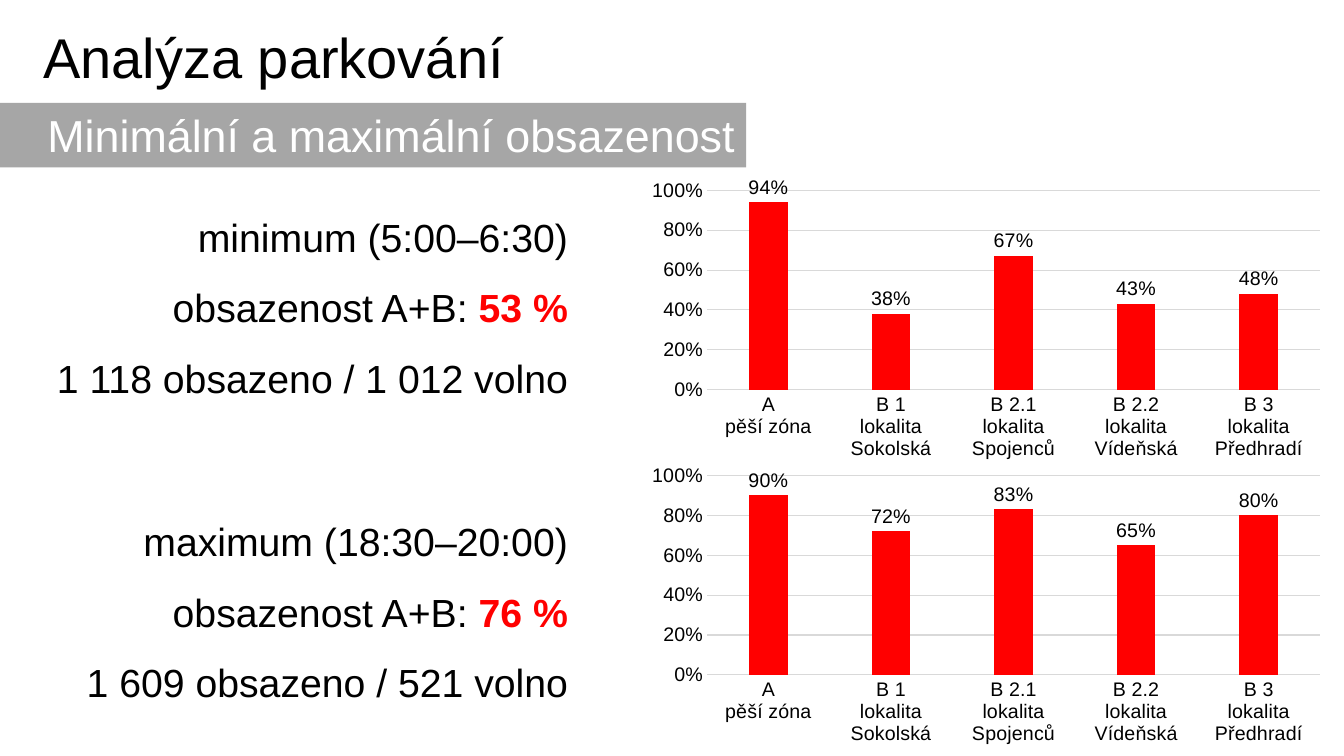
from dataclasses import dataclass

from pptx import Presentation
from pptx.chart.data import CategoryChartData
from pptx.dml.color import RGBColor
from pptx.enum.chart import XL_CHART_TYPE, XL_LABEL_POSITION, XL_TICK_MARK
from pptx.enum.shapes import MSO_SHAPE
from pptx.enum.text import MSO_ANCHOR, PP_ALIGN
from pptx.util import Inches, Pt

COLORS = {"text": "000000", "accent": "FF0000", "band": "A6A6A6",
          "grid": "D9D9D9", "white": "FFFFFF"}
FONT = "Arial"
ZONES = ["A\npěší zóna", "B 1\nlokalita Sokolská", "B 2.1\nlokalita Spojenců",
         "B 2.2\nlokalita Vídeňská", "B 3\nlokalita Předhradí"]


@dataclass
class Box:
    left: float
    top: float
    width: float
    height: float

    def emu(self) -> list:
        return [Inches(n) for n in (self.left, self.top, self.width, self.height)]


@dataclass
class Survey:
    note: Box
    chart: Box
    time: str
    share: str
    count: str
    values: tuple


SURVEYS = [
    Survey(Box(0.11, 1.83, 5.62, 2.22), Box(6.33, 1.72, 6.9, 2.9),
           "minimum (5:00–6:30)", "53 %", "1 118 obsazeno / 1 012 volno",
           (0.94, 0.38, 0.67, 0.43, 0.48)),
    Survey(Box(0.11, 4.85, 5.62, 2.22), Box(6.33, 4.55, 6.9, 2.9),
           "maximum (18:30–20:00)", "76 %", "1 609 obsazeno / 521 volno",
           (0.9, 0.72, 0.83, 0.65, 0.8)),
]


def color(name: str) -> RGBColor:
    return RGBColor.from_string(COLORS[name])


def style(font, size: int, name: str = "text", face: str = FONT) -> None:
    font.size = Pt(size)
    font.name = face
    font.color.rgb = color(name)


def add_rect(slide, box: Box, fill: str):
    rect = slide.shapes.add_shape(MSO_SHAPE.RECTANGLE, *box.emu())
    rect.shadow.inherit = False
    rect.fill.solid()
    rect.fill.fore_color.rgb = color(fill)
    rect.line.fill.background()
    rect.text_frame.word_wrap = True
    rect.text_frame.vertical_anchor = MSO_ANCHOR.TOP
    return rect


def add_title(slide) -> None:
    frame = slide.shapes.add_textbox(*Box(0.33, 0.17, 5.62, 0.77).emu()).text_frame
    frame.word_wrap = True
    frame.text = "Analýza parkování"
    style(frame.paragraphs[0].runs[0].font, 40)


def add_band(slide) -> None:
    frame = add_rect(slide, Box(0, 1.02, 7.4, 0.64), "band").text_frame
    frame.margin_left = Inches(0.47)
    frame.margin_right = 0
    frame.text = "Minimální a maximální obsazenost"
    para = frame.paragraphs[0]
    para.alignment = PP_ALIGN.LEFT
    style(para.runs[0].font, 32, "white")


def add_note(slide, survey: Survey) -> None:
    frame = add_rect(slide, survey.note, "white").text_frame
    frame.text = "\n".join([survey.time, "obsazenost A+B: ", survey.count])
    share = frame.paragraphs[1].add_run()
    share.text = survey.share
    for para in frame.paragraphs:
        para.alignment = PP_ALIGN.RIGHT
        para.line_spacing = 1.5
        for run in para.runs:
            style(run.font, 28)
    share.font.bold = True
    share.font.color.rgb = color("accent")


def add_bars(slide, survey: Survey) -> None:
    data = CategoryChartData(number_format="0%")
    data.categories = ZONES
    data.add_series("Series 1", survey.values)
    chart = slide.shapes.add_chart(
        XL_CHART_TYPE.COLUMN_CLUSTERED, *survey.chart.emu(), data).chart
    chart.has_legend = False
    chart.has_title = False
    style(chart.font, 14, face="Cabin")

    plot = chart.plots[0]
    plot.gap_width = 219
    plot.overlap = -27
    plot.vary_by_categories = False
    fill = plot.series[0].format.fill
    fill.solid()
    fill.fore_color.rgb = color("accent")
    plot.has_data_labels = True
    labels = plot.data_labels
    labels.show_value = True
    labels.position = XL_LABEL_POSITION.OUTSIDE_END
    labels.number_format = "0%"
    labels.number_format_is_linked = False
    style(labels.font, 14)

    zones, scale = chart.category_axis, chart.value_axis
    for axis in (zones, scale):
        axis.major_tick_mark = XL_TICK_MARK.NONE
        axis.minor_tick_mark = XL_TICK_MARK.NONE
        style(axis.tick_labels.font, 14)
    scale.minimum_scale = 0
    scale.maximum_scale = 1
    scale.major_unit = 0.2
    scale.tick_labels.number_format = "0%"
    scale.tick_labels.number_format_is_linked = False
    scale.format.line.fill.background()
    scale.has_major_gridlines = True
    for line in (zones.format.line, scale.major_gridlines.format.line):
        line.color.rgb = color("grid")
        line.width = Pt(0.75)


def main() -> None:
    deck = Presentation()
    deck.slide_width = Inches(13.33)
    deck.slide_height = Inches(7.5)
    slide = deck.slides.add_slide(deck.slide_layouts[6])
    for survey in SURVEYS:
        add_bars(slide, survey)
    add_title(slide)
    for survey in SURVEYS:
        add_note(slide, survey)
    add_band(slide)
    deck.save("out.pptx")


if __name__ == "__main__":
    main()
